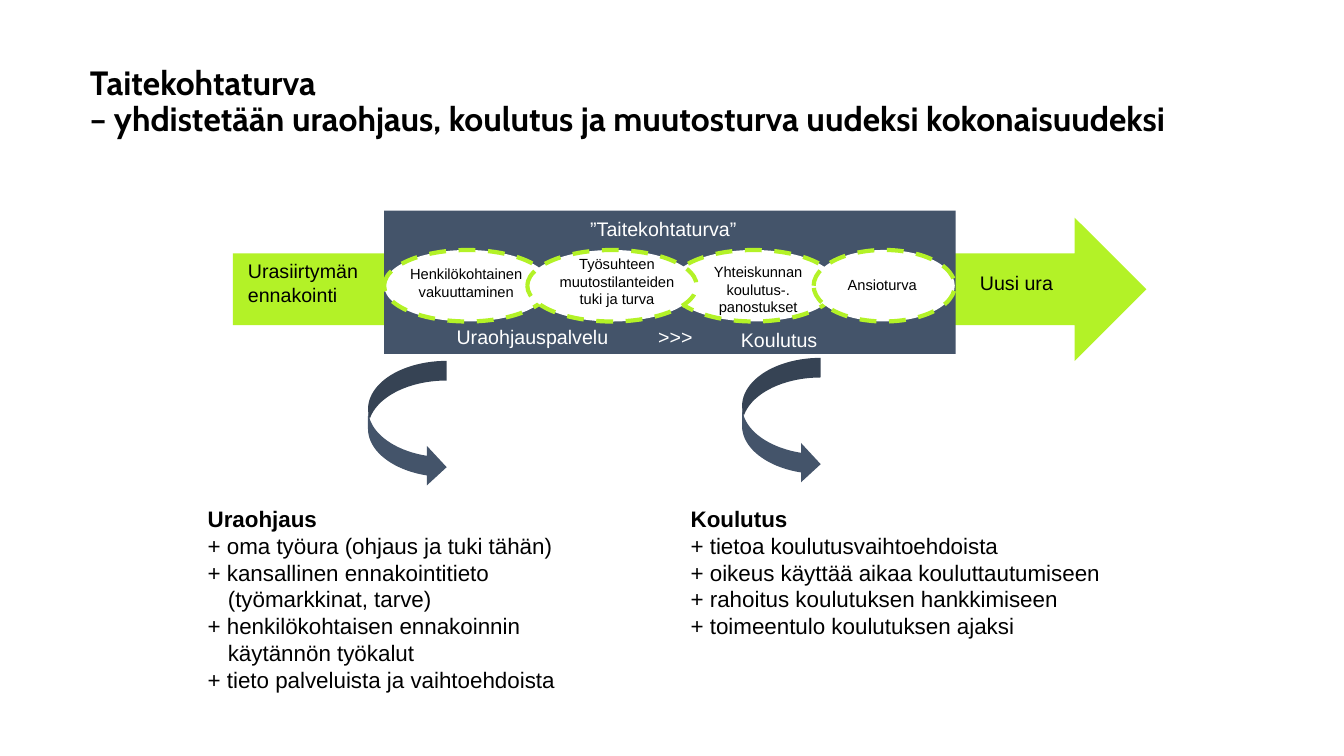
from copy import deepcopy
from dataclasses import dataclass

from lxml.etree import SubElement
from pptx import Presentation
from pptx.dml.color import RGBColor
from pptx.enum.dml import MSO_LINE
from pptx.enum.shapes import MSO_SHAPE
from pptx.enum.text import MSO_ANCHOR, MSO_AUTO_SIZE, PP_ALIGN
from pptx.oxml.ns import qn
from pptx.util import Inches, Pt


@dataclass(frozen=True)
class Theme:
    """Colours, fonts and type sizes of the slide."""
    black: RGBColor = RGBColor(0, 0, 0)
    white: RGBColor = RGBColor(255, 255, 255)
    slate: RGBColor = RGBColor.from_string("44546A")
    lime: RGBColor = RGBColor.from_string("B3F227")
    title_font: str = "Cabin"
    body_font: str = "Arial"
    title_size: float = 24
    list_size: float = 16
    label_size: float = 14
    stage_size: float = 10.5


@dataclass(frozen=True)
class Box:
    """A rectangle in inches."""
    left: float
    top: float
    width: float
    height: float

    def inner(self, left, top, width, height):
        """Return a box offset from the corner of this one."""
        return Box(self.left + left, self.top + top, width, height)

    def lengths(self):
        """Return the four sides as slide lengths."""
        return [Inches(side) for side in (self.left, self.top, self.width, self.height)]


THEME = Theme()


def write_para(para, text, size=THEME.label_size, font=THEME.body_font,
               color=THEME.black, bold=False, align=PP_ALIGN.LEFT,
               hanging=0, line_spacing=1.0):
    """Fill a paragraph with text, where a newline is a line break."""
    para.alignment = align
    para.line_spacing = line_spacing
    para.space_before = Pt(0)
    properties = para._p.get_or_add_pPr()
    properties.set("marL", str(Inches(hanging)))
    properties.set("indent", str(-Inches(hanging)))
    SubElement(properties, qn("a:buNone"))
    for number, line in enumerate(text.split("\n")):
        if number:
            para.add_line_break()
        span = para.add_run()
        span.text = line
        span.font.name = font
        span.font.size = Pt(size)
        span.font.bold = bold
        span.font.color.rgb = color
    for line_break in para._p.findall(qn("a:br")):
        line_break.insert(0, deepcopy(span.font._element))


def place_placeholder(holder, box, anchor):
    """Move a placeholder into a box and return its text frame."""
    holder.left, holder.top, holder.width, holder.height = box.lengths()
    frame = holder.text_frame
    frame.auto_size = MSO_AUTO_SIZE.NONE
    frame.vertical_anchor = anchor
    return frame


def add_label(page, box, text, **style):
    """Add a wrapping text box."""
    frame = page.shapes.add_textbox(*box.lengths()).text_frame
    frame.word_wrap = True
    write_para(frame.paragraphs[0], text, **style)


def add_filled(page, preset, box, fill, outline=None):
    """Add a flat preset shape with an optional dashed outline."""
    shape = page.shapes.add_shape(preset, *box.lengths())
    shape.shadow.inherit = False
    shape.fill.solid()
    shape.fill.fore_color.rgb = fill
    if outline is None:
        shape.line.fill.background()
    else:
        shape.line.color.rgb = outline
        shape.line.width = Pt(3)
        shape.line.dash_style = MSO_LINE.DASH


def draw_title(page, box):
    """Write the slide title."""
    frame = place_placeholder(page.shapes.title, box, MSO_ANCHOR.MIDDLE)
    write_para(
        frame.paragraphs[0],
        "Taitekohtaturva\n– yhdistetään uraohjaus, koulutus ja muutosturva uudeksi kokonaisuudeksi",
        size=THEME.title_size, font=THEME.title_font, bold=True, line_spacing=0.9)


def draw_stage(page, box, text, label_box):
    """Draw one dashed ellipse with its label."""
    add_filled(page, MSO_SHAPE.OVAL, box, THEME.white, THEME.lime)
    add_label(page, box.inner(*label_box), text,
              size=THEME.stage_size, align=PP_ALIGN.CENTER)


def draw_process(page, box):
    """Draw the career arrow, its central panel and the four stages."""
    panel = box.inner(1.5, -0.07, 5.67, 1.42)
    add_filled(page, MSO_SHAPE.RIGHT_ARROW, box, THEME.lime)
    add_filled(page, MSO_SHAPE.RECTANGLE, panel, THEME.slate)
    add_label(page, box.inner(0.05, 0.36, 1.65, 0.57), "Urasiirtymän\nennakointi")
    add_label(page, box.inner(7.31, 0.48, 1.65, 0.34), "Uusi ura")
    add_label(page, panel.inner(0.02, 0.01, 5.5, 0.34), "”Taitekohtaturva”",
              color=THEME.white, align=PP_ALIGN.CENTER)
    add_label(page, panel.inner(0.62, 1.08, 3.08, 0.34), "Uraohjauspalvelu\t>>>",
              color=THEME.white)
    add_label(page, panel.inner(3.44, 1.11, 2.6, 0.34), "Koulutus", color=THEME.white)

    pitch = 1.42
    stages = [
        (2, 1.65, "Yhteiskunnan koulutus-. panostukset", (0.16, 0.08, 1.42, 0.63)),
        (0, 1.65, "Henkilökohtainen vakuuttaminen", (0.15, 0.1, 1.33, 0.45)),
        (1, 1.68, "Työsuhteen muutostilanteiden tuki ja turva", (0.14, 0, 1.5, 0.63)),
        (3, 1.4, "Ansioturva", (-0.03, 0.21, 1.42, 0.28)),
    ]
    for position, width, text, label_box in stages:
        draw_stage(page, panel.inner(position * pitch, 0.39, width, 0.71), text, label_box)


def draw_benefits(holder, box, heading, items):
    """Write a bold heading and its hanging list."""
    frame = place_placeholder(holder, box, MSO_ANCHOR.TOP)
    write_para(frame.paragraphs[0], heading, size=THEME.list_size, bold=True)
    for item in items:
        write_para(frame.add_paragraph(), f"+ {item}", size=THEME.list_size, hanging=0.2)


def main():
    """Build and save the slide."""
    deck = Presentation()
    deck.slide_width, deck.slide_height = Inches(13.33), Inches(7.5)
    page = deck.slides.add_slide(deck.slide_layouts[3])
    draw_title(page, Box(0.79, 0.39, 11.86, 1.26))
    draw_process(page, Box(2.31, 2.16, 9.06, 1.42))
    for left, top in ((3.65, 3.58), (7.36, 3.55)):
        add_filled(page, MSO_SHAPE.CURVED_RIGHT_ARROW, Box(left, top, 0.78, 1.25), THEME.slate)
    draw_benefits(page.placeholders[1], Box(1.96, 4.96, 4.53, 1.99), "Uraohjaus", [
        "oma työura (ohjaus ja tuki tähän)",
        "kansallinen ennakointitieto\n(työmarkkinat, tarve)",
        "henkilökohtaisen ennakoinnin\nkäytännön työkalut",
        "tieto palveluista ja vaihtoehdoista",
    ])
    draw_benefits(page.placeholders[2], Box(6.75, 4.96, 4.53, 1.45), "Koulutus", [
        "tietoa koulutusvaihtoehdoista",
        "oikeus käyttää aikaa kouluttautumiseen",
        "rahoitus koulutuksen hankkimiseen",
        "toimeentulo koulutuksen ajaksi",
    ])
    deck.save("out.pptx")


if __name__ == "__main__":
    main()
